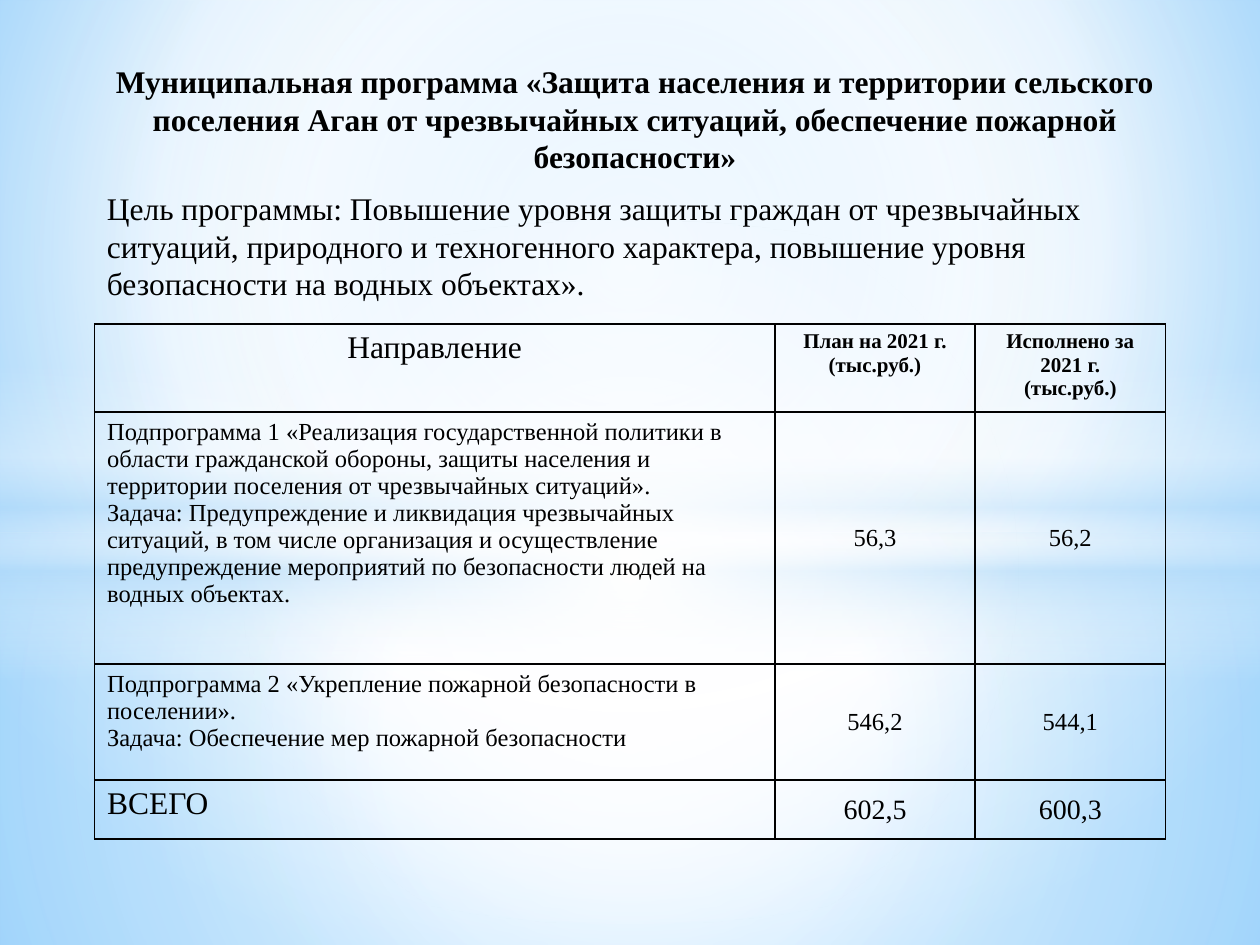
from lxml import etree
from pptx import Presentation
from pptx.dml.color import RGBColor
from pptx.enum.shapes import MSO_SHAPE
from pptx.enum.text import MSO_ANCHOR, MSO_AUTO_SIZE, PP_ALIGN
from pptx.oxml.ns import qn
from pptx.util import Inches, Pt

RECT, OVAL = MSO_SHAPE.RECTANGLE, MSO_SHAPE.OVAL
TOP, MIDDLE = MSO_ANCHOR.TOP, MSO_ANCHOR.MIDDLE
LEFT, CENTER = PP_ALIGN.LEFT, PP_ALIGN.CENTER
FONT = "Times New Roman"
COLORS = {
    "ink": "000000", "white": "FFFFFF", "pale": "B4DCFA",
    "sky": "9ED5FF", "blue": "5BB9FF",
}
WIDE, HIGH = 10, 7.5
EDGE = 0.75
COLS = [5.4, 1.59, 1.51]
ROWS = [0.66, 2, 0.92, 0.47]

TITLE = ("Муниципальная программа «Защита населения и территории сельского поселения Аган "
         "от чрезвычайных ситуаций, обеспечение пожарной безопасности»")
GOAL = ("Цель программы: Повышение уровня защиты граждан от чрезвычайных ситуаций, "
        "природного и техногенного характера, повышение уровня безопасности на водных объектах».")
HEADS = ["Направление", "План на 2021 г.\n(тыс.руб.)", "Исполнено за\n2021 г.\n(тыс.руб.)"]
TASKS = [
    ["Подпрограмма 1 «Реализация государственной политики в области гражданской обороны, "
     "защиты населения и территории поселения от чрезвычайных ситуаций».\n"
     "Задача: Предупреждение и ликвидация чрезвычайных ситуаций, в том числе организация и "
     "осуществление предупреждение мероприятий по безопасности людей на водных объектах.",
     "56,3", "56,2"],
    ["Подпрограмма 2 «Укрепление пожарной безопасности в поселении».\n"
     "Задача: Обеспечение мер пожарной безопасности", "546,2", "544,1"],
]
TOTAL = ["ВСЕГО", "602,5", "600,3"]


def place(wide, high, left, top):
    return [Inches(n) for n in (left, top, wide, high)]


def write(frame, text, size=18, bold=False, align=LEFT, before=0, after=0):
    frame.text = text
    for para in frame.paragraphs:
        para.alignment = align
        para.space_before, para.space_after = Pt(before), Pt(after)
        for run in para.runs:
            run.font.name, run.font.size, run.font.bold = FONT, Pt(size), bold
            run.font.color.rgb = RGBColor.from_string(COLORS["ink"])


def blend(fill, root, stops, focus=None):
    fill.solid()
    old = next(root.iter(qn("a:solidFill")))
    grad = etree.Element(qn("a:gradFill"), rotWithShape="1")
    marks = etree.SubElement(grad, qn("a:gsLst"))
    for spot, name, alpha in stops:
        mark = etree.SubElement(marks, qn("a:gs"), pos=str(spot * 1000))
        tone = etree.SubElement(mark, qn("a:srgbClr"), val=COLORS[name])
        if alpha < 100:
            etree.SubElement(tone, qn("a:alpha"), val=str(alpha * 1000))
    if focus:
        path = etree.SubElement(grad, qn("a:path"), path="circle")
        sides = {side: str(n * 1000) for side, n in zip("ltrb", focus)}
        etree.SubElement(path, qn("a:fillToRect"), sides)
    else:
        etree.SubElement(grad, qn("a:lin"), ang="5400000", scaled="0")
    old.getparent().replace(old, grad)


def glow(slide, kind, top, high, stops, focus=None):
    shape = slide.shapes.add_shape(kind, *place(WIDE, high, 0, top))
    shape.shadow.inherit = False
    shape.line.fill.background()
    blend(shape.fill, shape.element.spPr, stops, focus)


def backdrop(slide):
    mid = (50, 50, 50, 50)
    blend(slide.background.fill, slide.element,
          [(0, "sky", 100), (60, "white", 100), (100, "blue", 100)], (20, 10, 20, 60))
    glow(slide, RECT, 4.23, HIGH - 4.23,
         [(0, "white", 91), (37, "white", 76), (100, "pale", 79)], mid)
    glow(slide, RECT, 0, 4.23,
         [(0, "white", 89), (48, "white", 62), (100, "pale", 79)], mid)
    glow(slide, RECT, 2.9, 2.5,
         [(0, "white", 0), (29, "white", 30), (45, "pale", 40),
          (55, "white", 26), (65, "pale", 60), (100, "white", 0)])
    glow(slide, OVAL, 1.75, 5.58, [(0, "white", 100), (54, "white", 0)], mid)


def heading(slide):
    title = slide.shapes.title
    title.left, title.top, title.width, title.height = place(8.58, 1.01, EDGE, 0.44)
    frame = title.text_frame
    frame.auto_size, frame.word_wrap = MSO_AUTO_SIZE.NONE, True
    frame.vertical_anchor = TOP
    write(frame, TITLE, bold=True, align=CENTER, before=3.6, after=3)
    title.element.getparent().append(title.element)


def goal(slide):
    frame = slide.shapes.add_textbox(*place(8.58, 1, EDGE, 1.45)).text_frame
    frame.word_wrap = True
    write(frame, GOAL, before=3.6, after=3)


def border(cell):
    props = cell._tc.get_or_add_tcPr()
    for spot, side in enumerate(("lnL", "lnR", "lnT", "lnB")):
        line = etree.Element(qn("a:" + side), w=str(Pt(1)))
        fill = etree.SubElement(line, qn("a:solidFill"))
        etree.SubElement(fill, qn("a:srgbClr"), val=COLORS["ink"])
        props.insert(spot, line)


def budget(slide):
    spot = place(sum(COLS), sum(ROWS), EDGE, 2.57)
    table = slide.shapes.add_table(len(ROWS), len(COLS), *spot).table
    table.first_row = table.horz_banding = False
    for col, wide in zip(table.columns, COLS):
        col.width = Inches(wide)
    sizes = [(18, 12), (14, 14), (14, 14), (18, 16)]
    for r, (row, high, texts) in enumerate(zip(table.rows, ROWS, [HEADS, *TASKS, TOTAL])):
        row.height = Inches(high)
        for c, (cell, text) in enumerate(zip(row.cells, texts)):
            cell.fill.background()
            cell.vertical_anchor = MIDDLE if r and c else TOP
            write(cell.text_frame, text, size=sizes[r][c > 0], bold=r == 0 and c > 0,
                  align=CENTER if c or r == 0 else LEFT)
            border(cell)


def main():
    deck = Presentation()
    deck.slide_width, deck.slide_height = Inches(WIDE), Inches(HIGH)
    slide = deck.slides.add_slide(deck.slide_layouts[5])
    backdrop(slide)
    heading(slide)
    goal(slide)
    budget(slide)
    deck.save("out.pptx")


if __name__ == "__main__":
    main()
